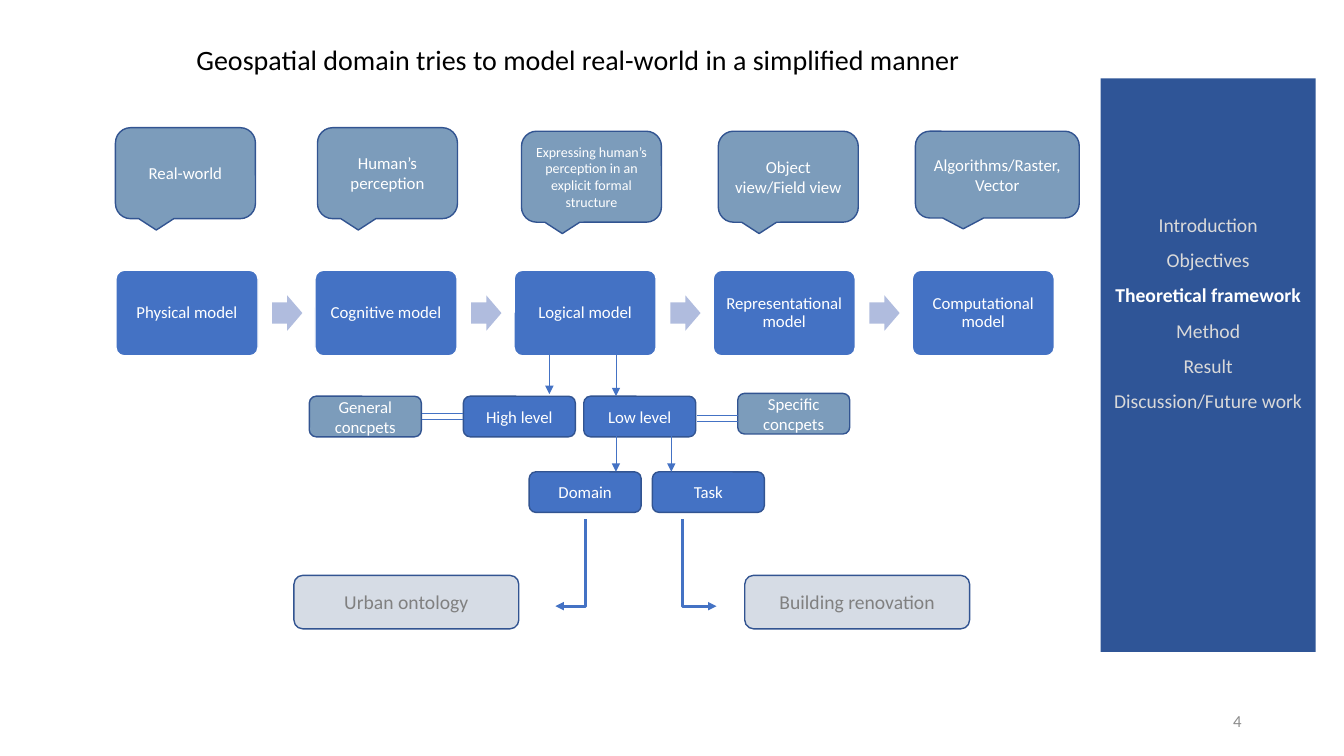
from lxml.etree import SubElement
from pptx import Presentation
from pptx.dml.color import RGBColor
from pptx.enum.shapes import MSO_CONNECTOR as LINE, MSO_SHAPE as SHAPE
from pptx.enum.text import MSO_ANCHOR as ANCHOR, PP_ALIGN as ALIGN
from pptx.oxml.ns import qn
from pptx.util import Pt

WHITE = RGBColor(0xFF, 0xFF, 0xFF)
BLACK = RGBColor(0, 0, 0)
BLUE = RGBColor(0x44, 0x72, 0xC4)
STEEL = RGBColor(0x7C, 0x9C, 0xBB)
OUTLINE = RGBColor(0x32, 0x54, 0x91)
NAVY = RGBColor(0x2F, 0x55, 0x97)
LILAC = RGBColor(0xB0, 0xBC, 0xDE)
PALE = RGBColor(0xD6, 0xDC, 0xE5)
SILVER = RGBColor(0xD9, 0xD9, 0xD9)
GREY = RGBColor(0x80, 0x80, 0x80)
NUMBER_GREY = RGBColor(0x8C, 0x8C, 0x8C)


def style_text(tf, text, size, color, align=ALIGN.CENTER):
    tf.text = text
    tf.word_wrap = True
    tf.vertical_anchor = ANCHOR.MIDDLE
    for p in tf.paragraphs:
        p.alignment = align
        for r in p.runs:
            r.font.name = "Calibri"
            r.font.size = Pt(size)
            r.font.color.rgb = color


def add_box(s, kind, x, y, w, h, fill, line=None, text="", size=12, color=WHITE):
    sp = s.shapes.add_shape(kind, Pt(x), Pt(y), Pt(w), Pt(h))
    sp.shadow.inherit = False
    sp.fill.solid()
    sp.fill.fore_color.rgb = fill
    if line is None:
        sp.line.fill.background()
    else:
        sp.line.color.rgb = line
        sp.line.width = Pt(1)
    if text:
        style_text(sp.text_frame, text, size, color)
    return sp


def add_line(s, x1, y1, x2, y2, width=0.5, arrow=None, kind=LINE.STRAIGHT):
    cx = s.shapes.add_connector(kind, Pt(x1), Pt(y1), Pt(x2), Pt(y2))
    cx.line.color.rgb = BLUE
    cx.line.width = Pt(width)
    if arrow:
        SubElement(cx.line._get_or_add_ln(), qn("a:" + arrow), type="triangle")
    SubElement(cx._element.spPr, qn("a:effectLst"))
    return cx


def add_title(s, x, y, w, h):
    sp = s.shapes.title
    sp.left, sp.top, sp.width, sp.height = Pt(x), Pt(y), Pt(w), Pt(h)
    style_text(sp.text_frame, "Geospatial domain tries to model real-world in a simplified manner", 20, BLACK)


def add_sidebar(s, x, y, w, h):
    topics = ["Introduction", "Objectives", "Theoretical framework", "Method", "Result", "Discussion/Future work"]
    current = "Theoretical framework"
    sp = add_box(s, SHAPE.RECTANGLE, x, y, w, h, NAVY, text="\n".join(topics), size=14, color=SILVER)
    tf = sp.text_frame
    tf.vertical_anchor = ANCHOR.TOP
    tf.margin_top = Pt(98)
    for i, p in enumerate(tf.paragraphs):
        p.line_spacing = 0.9
        if i:
            p.space_before = Pt(10)
        if p.text == current:
            p.runs[0].font.bold = True
            p.runs[0].font.color.rgb = WHITE


def add_model_chain(s, x, y, w, h):
    names = ["Physical", "Cognitive", "Logical", "Representational", "Computational"]
    card_w, arrow_w, arrow_h = 101.5, 21.6, 25.2
    pitch = (w - card_w) / (len(names) - 1)
    for i, name in enumerate(names):
        left = x + i * pitch
        card = add_box(s, SHAPE.ROUNDED_RECTANGLE, left, y, card_w, h, BLUE, WHITE, name + " model")
        card.adjustments[0] = 0.1
        tf = card.text_frame
        tf.margin_left = tf.margin_right = Pt(5)
        tf.paragraphs[0].line_spacing = 0.9
        if i < len(names) - 1:
            arrow = add_box(s, SHAPE.RIGHT_ARROW, left + 111.6, y + (h - arrow_h) / 2, arrow_w, arrow_h, LILAC)
            arrow.adjustments[0] = 0.6


def add_callouts(s, x, y):
    callouts = [
        (0, 0, 100, 65, "Real-world", 12),
        (144.3, 0, 100, 65, "Human’s perception", 12),
        (290, 2.5, 100, 65, "Expressing human’s perception in an explicit formal structure", 10),
        (430.6, 2.5, 100, 65, "Object view/Field view", 12),
        (571.4, 2.5, 117, 62, "Algorithms/Raster, Vector", 12),
    ]
    for dx, dy, w, h, text, size in callouts:
        add_box(s, SHAPE.ROUNDED_RECTANGULAR_CALLOUT, x + dx, y + dy, w, h, STEEL, OUTLINE, text, size)


def add_levels(s, x, y):
    nodes = [
        (207, 31, "Low level", BLUE),
        (121, 31, "High level", BLUE),
        (11, 31, "General concpets", STEEL),
        (317, 29, "Specific concpets", STEEL),
        (168, 85, "Domain", BLUE),
        (256, 85, "Task", BLUE),
    ]
    for dx, dy, text, fill in nodes:
        add_box(s, SHAPE.ROUNDED_RECTANGLE, x + dx, y + dy, 80, 29, fill, OUTLINE, text)
    for dx, top, bottom in [(182.4, 0, 29.5), (230, 1.5, 31), (230, 56, 85), (269.5, 56, 85)]:
        add_line(s, x + dx, y + top, x + dx, y + bottom, arrow="tailEnd")
    for dx, dy in [(91.7, 43.2), (288.2, 44.6)]:
        for gap in (0, 4.4):
            add_line(s, x + dx, y + dy + gap, x + dx + 29, y + dy + gap)


def add_outcomes(s, x, y):
    for dx, text in [(0, "Urban ontology"), (322, "Building renovation")]:
        add_box(s, SHAPE.ROUNDED_RECTANGLE, x + dx, y, 160.6, 38.2, PALE, OUTLINE, text, 14, GREY)
    for tip, stem in [(186.7, 208.3), (301.9, 277.4)]:
        elbow = add_line(s, x + tip, y + 22, x + stem, y - 40, 2, "headEnd", LINE.ELBOW)
        elbow._element.spPr.find(qn("a:prstGeom")).set("prst", "bentConnector2")


def add_slide_number(s, x, y, w, h):
    sp = s.shapes.add_textbox(Pt(x), Pt(y), Pt(w), Pt(h))
    style_text(sp.text_frame, "4", 12, NUMBER_GREY, ALIGN.RIGHT)


def main():
    prs = Presentation()
    prs.slide_width, prs.slide_height = Pt(960), Pt(540)
    s = prs.slides.add_slide(prs.slide_layouts[5])
    add_title(s, 80.6, 27, 664.6, 30)
    add_slide_number(s, 678, 500.5, 216, 28.8)
    add_sidebar(s, 786.2, 56, 153.6, 409.7)
    add_model_chain(s, 82.8, 193, 670.3, 61.2)
    add_callouts(s, 82.5, 91.2)
    add_levels(s, 210, 252)
    add_outcomes(s, 210, 411)
    prs.save("out.pptx")


if __name__ == "__main__":
    main()
